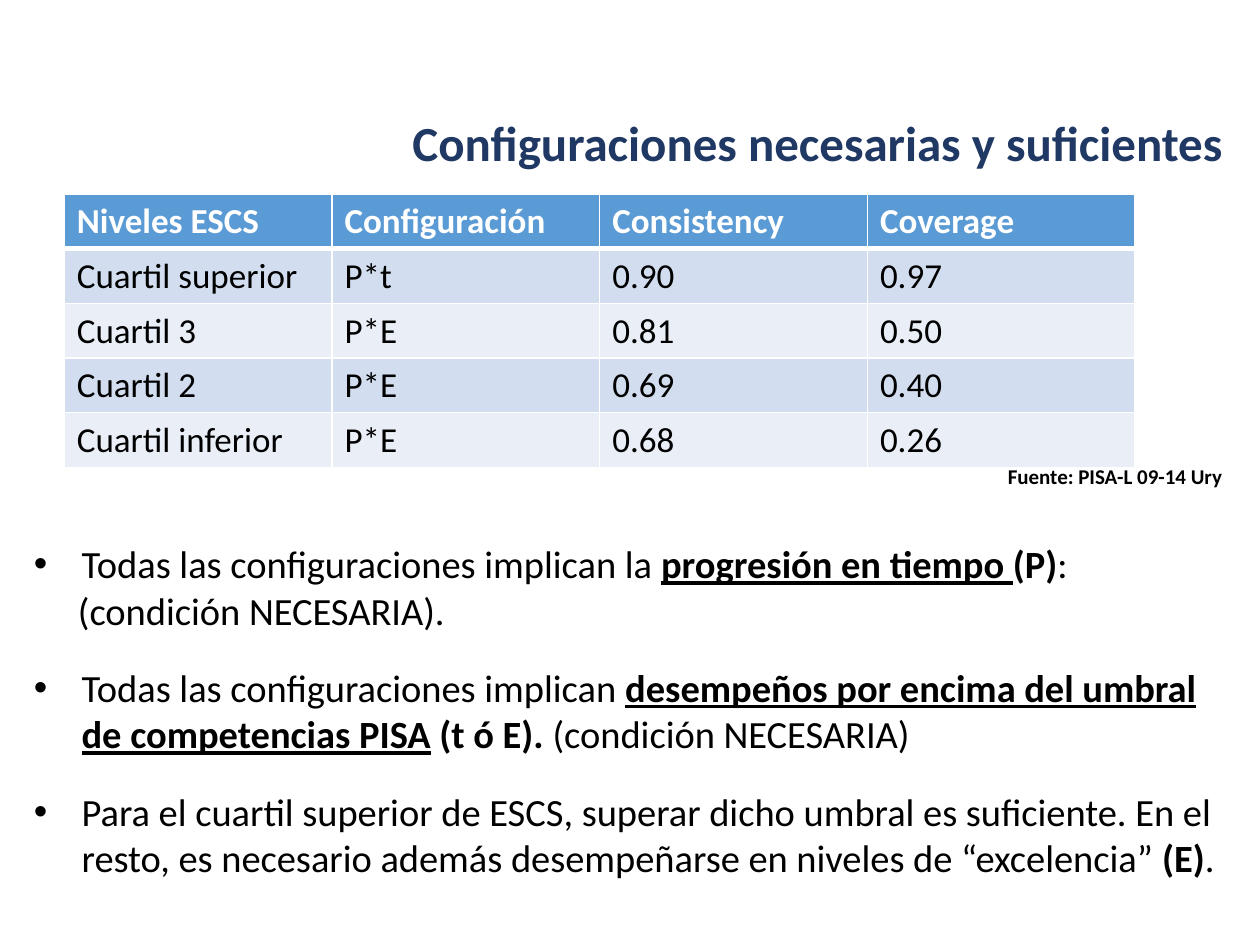
from lxml import etree
from pptx import Presentation, util as u
from pptx.dml.color import RGBColor
from pptx.enum import text as t
from pptx.oxml.ns import qn

W, H = 10, 7.5
FONT = "Calibri"
NAVY, BLUE, PALE, LIGHT = "203864", "5B9BD5", "D2DEEF", "EAEFF7"
WHITE, BLACK = "FFFFFF", "000000"

TITLE = "Configuraciones necesarias y suficientes"
SOURCE = "Fuente: PISA-L 09-14 Ury"
ROWS = [
    ("Niveles ESCS", "Configuración", "Consistency", "Coverage"),
    ("Cuartil superior", "P*t", "0.90", "0.97"),
    ("Cuartil 3", "P*E", "0.81", "0.50"),
    ("Cuartil 2", "P*E", "0.69", "0.40"),
    ("Cuartil inferior", "P*E", "0.68", "0.26"),
]
POINTS = [
    (True, [("Todas las configuraciones implican la ", ""),
            ("progresión en tiempo ", "bu"), ("(P)", "b"), (":", "")]),
    (False, [("(condición NECESARIA).", "")]),
    (True, [("Todas las configuraciones implican ", ""),
            ("desempeños por encima del umbral de competencias PISA", "bu"),
            (" (t ó E). ", "b"), ("(condición NECESARIA)", "")]),
    (True, [("Para el cuartil superior de ESCS, superar dicho umbral es "
             "suficiente. En el resto, es necesario además desempeñarse en "
             "niveles de “excelencia” ", ""), ("(E)", "b"), (".", "")]),
]


def rgb(code):
    return RGBColor.from_string(code)


def write(para, words, size, color=BLACK, style=""):
    run = para.add_run()
    run.text = words
    font = run.font
    font.name, font.size = FONT, u.Pt(size)
    font.bold, font.underline = "b" in style, "u" in style
    font.color.rgb = rgb(color)


def frame(slide, left, top, width, height):
    box = slide.shapes.add_textbox(*map(u.Inches, (left, top, width, height)))
    box.text_frame.word_wrap = True
    return box.text_frame


def label(slide, area, words, size, color):
    body = frame(slide, *area)
    para = body.paragraphs[0]
    para.alignment = t.PP_ALIGN.RIGHT
    write(para, words, size, color, "b")
    return body


def edge(cell, side, width):
    line = etree.SubElement(cell._tc.get_or_add_tcPr(), qn("a:ln" + side),
                            w=str(u.Pt(width)))
    fill = etree.SubElement(line, qn("a:solidFill"))
    etree.SubElement(fill, qn("a:srgbClr"), val=WHITE)


def grid(slide, left, top, width, step):
    count = len(ROWS)
    table = slide.shapes.add_table(
        count, len(ROWS[0]),
        *map(u.Inches, (left, top, width, step * count))).table
    for r, row in enumerate(ROWS):
        back = BLUE if r == 0 else PALE if r % 2 else LIGHT
        for c, words in enumerate(row):
            cell = table.cell(r, c)
            for side in "LRTB":
                heavy = (r, side) in ((0, "B"), (1, "T"))
                edge(cell, side, 3 if heavy else 1)
            cell.fill.solid()
            cell.fill.fore_color.rgb = rgb(back)
            write(cell.text_frame.paragraphs[0], words, 20,
                  BLACK if r else WHITE, "" if r else "b")


def points(slide, area, indent):
    body = frame(slide, *area)
    body.auto_size = t.MSO_AUTO_SIZE.SHAPE_TO_FIT_TEXT
    for i, (mark, runs) in enumerate(POINTS):
        para = body.add_paragraph() if i else body.paragraphs[0]
        props = para._p.get_or_add_pPr()
        if mark:
            props.set("marL", str(u.Inches(indent)))
            props.set("indent", str(-u.Inches(indent)))
            if i:
                para.space_before = u.Pt(18)
            etree.SubElement(props, qn("a:buFont"), typeface="Arial")
            etree.SubElement(props, qn("a:buChar"), char="•")
        else:
            props.set("marL", str(u.Inches(indent - 0.03)))
        for words, style in runs:
            write(para, words, 22, style=style)


def main():
    deck = Presentation()
    deck.slide_width, deck.slide_height = u.Inches(W), u.Inches(H)
    slide = deck.slides.add_slide(deck.slide_layouts[6])
    head = label(slide, (0.13 * W, 0.53, 0.85 * W, 1.25), TITLE, 28, NAVY)
    head.vertical_anchor = t.MSO_ANCHOR.MIDDLE
    head.paragraphs[0].line_spacing = 0.9
    grid(slide, 0.51, 1.54, 0.85 * W, 0.41)
    points(slide, (0.17, 4.24, 0.96 * W, 2.83), 0.38)
    label(slide, (0.65 * W, 3.63, 0.33 * W, 0.47), SOURCE, 12, BLACK)
    deck.save("out.pptx")


if __name__ == "__main__":
    main()
